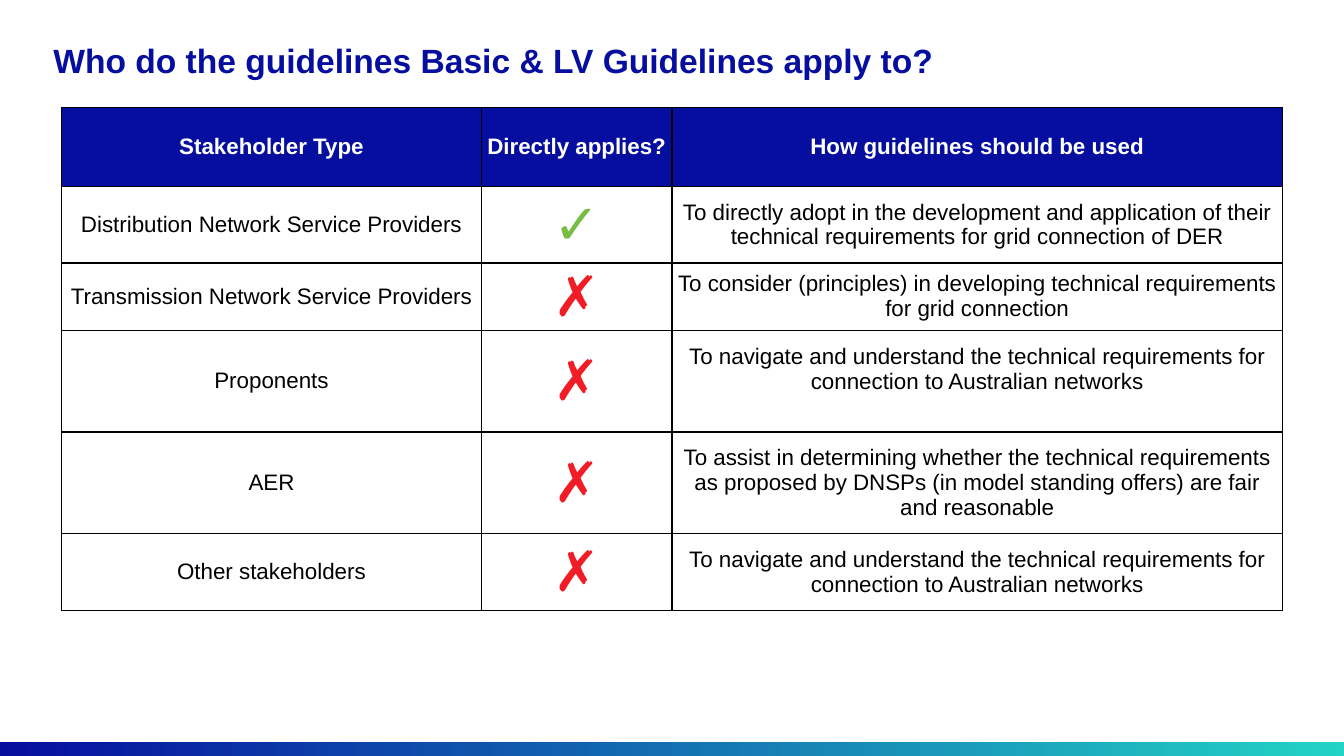
from dataclasses import dataclass

from lxml import etree
from pptx import Presentation
from pptx import util as u
from pptx.dml.color import RGBColor
from pptx.enum import shapes, text
from pptx.oxml.ns import qn

COLS, ROWS = 1334, 750
UNIT = u.Inches(0.01)
FONT = "Arial"
HUES = {
    "navy": "060E9F",
    "teal": "22D3C5",
    "white": "FFFFFF",
    "black": "000000",
    "green": "77BD43",
    "red": "F01D27",
}
MARKS = {True: ("✓", "green"), False: ("✗", "red")}
HEADS = ("Stakeholder Type", "Directly applies?", "How guidelines should be used")
WIDTHS = (417, 189, 606)
HEAD_TALL = 78


@dataclass(frozen=True)
class Box:
    left: int
    top: int
    wide: int
    tall: int

    def place(self) -> tuple[int, ...]:
        return tuple(n * UNIT for n in (self.left, self.top, self.wide, self.tall))


@dataclass(frozen=True)
class Style:
    size: int
    hue: str
    bold: bool = False


@dataclass(frozen=True)
class Holder:
    name: str
    direct: bool
    usage: str
    tall: int
    lift: int = 0


NAVIGATE = "To navigate and understand the technical requirements for connection to Australian networks"
HOLDERS = (
    Holder("Distribution Network Service Providers", True,
           "To directly adopt in the development and application of their "
           "technical requirements for grid connection of DER", 76),
    Holder("Transmission Network Service Providers", False,
           "To consider (principles) in developing technical requirements "
           "for grid connection", 65),
    Holder("Proponents", False, NAVIGATE, 101, 24),
    Holder("AER", False,
           "To assist in determining whether the technical requirements as proposed "
           "by DNSPs (in model standing offers) are fair and reasonable", 101),
    Holder("Other stakeholders", False, NAVIGATE, 76),
)
HEAD = Style(16, "white", True)
BODY = Style(16, "black")
TITLE = Style(24, "navy", True)


def hue(name: str) -> RGBColor:
    return RGBColor.from_string(HUES[name])


def write(frame, words: str, style: Style):
    para = frame.paragraphs[0]
    para.text = words
    font = para.font
    font.name, font.size, font.bold = FONT, u.Pt(style.size), style.bold
    font.color.rgb = hue(style.hue)
    return para


def border(cell) -> None:
    props = cell._tc.get_or_add_tcPr()
    for spot, side in enumerate(("lnL", "lnR", "lnT", "lnB")):
        line = etree.Element(qn(f"a:{side}"), w=str(u.Pt(1)))
        fill = etree.SubElement(line, qn("a:solidFill"))
        etree.SubElement(fill, qn("a:srgbClr"), val=HUES["black"])
        props.insert(spot, line)


def put(cell, words: str, style: Style, back: str, lift: int = 0) -> None:
    cell.margin_left = cell.margin_right = 5 * UNIT
    cell.margin_top, cell.margin_bottom = 0, lift * UNIT
    cell.vertical_anchor = text.MSO_ANCHOR.MIDDLE
    cell.fill.solid()
    cell.fill.fore_color.rgb = hue(back)
    write(cell.text_frame, words, style).alignment = text.PP_ALIGN.CENTER
    border(cell)


def draw_strip(slide) -> None:
    strip = slide.shapes.add_shape(
        shapes.MSO_SHAPE.RECTANGLE, *Box(0, ROWS - 14, COLS, 14).place())
    strip.shadow.inherit = False
    strip.line.fill.background()
    strip.fill.gradient()
    strip.fill.gradient_angle = 0
    for stop, name in zip(strip.fill.gradient_stops, ("navy", "teal")):
        stop.color.rgb = hue(name)


def draw_title(slide) -> None:
    frame = slide.shapes.add_textbox(*Box(53, 44, 1228, 79).place()).text_frame
    frame.word_wrap = True
    frame.margin_left = frame.margin_right = frame.margin_top = frame.margin_bottom = 0
    para = write(frame, "Who do the guidelines Basic & LV Guidelines apply to?", TITLE)
    para.line_spacing = 0.9


def draw_table(slide) -> None:
    talls = (HEAD_TALL, *(h.tall for h in HOLDERS))
    area = Box(61, 107, sum(WIDTHS), sum(talls))
    table = slide.shapes.add_table(len(talls), len(WIDTHS), *area.place()).table
    table.horz_banding = False
    for col, wide in zip(table.columns, WIDTHS):
        col.width = wide * UNIT
    for row, tall in zip(table.rows, talls):
        row.height = tall * UNIT
    for col, words in enumerate(HEADS):
        put(table.cell(0, col), words, HEAD, "navy")
    for row, holder in enumerate(HOLDERS, 1):
        mark, tint = MARKS[holder.direct]
        put(table.cell(row, 0), holder.name, BODY, "white")
        put(table.cell(row, 1), mark, Style(40, tint), "white")
        put(table.cell(row, 2), holder.usage, BODY, "white", holder.lift)


def main() -> None:
    deck = Presentation()
    deck.slide_width, deck.slide_height = COLS * UNIT, ROWS * UNIT
    slide = deck.slides.add_slide(deck.slide_layouts[6])
    draw_strip(slide)
    draw_title(slide)
    draw_table(slide)
    deck.save("out.pptx")


if __name__ == "__main__":
    main()
